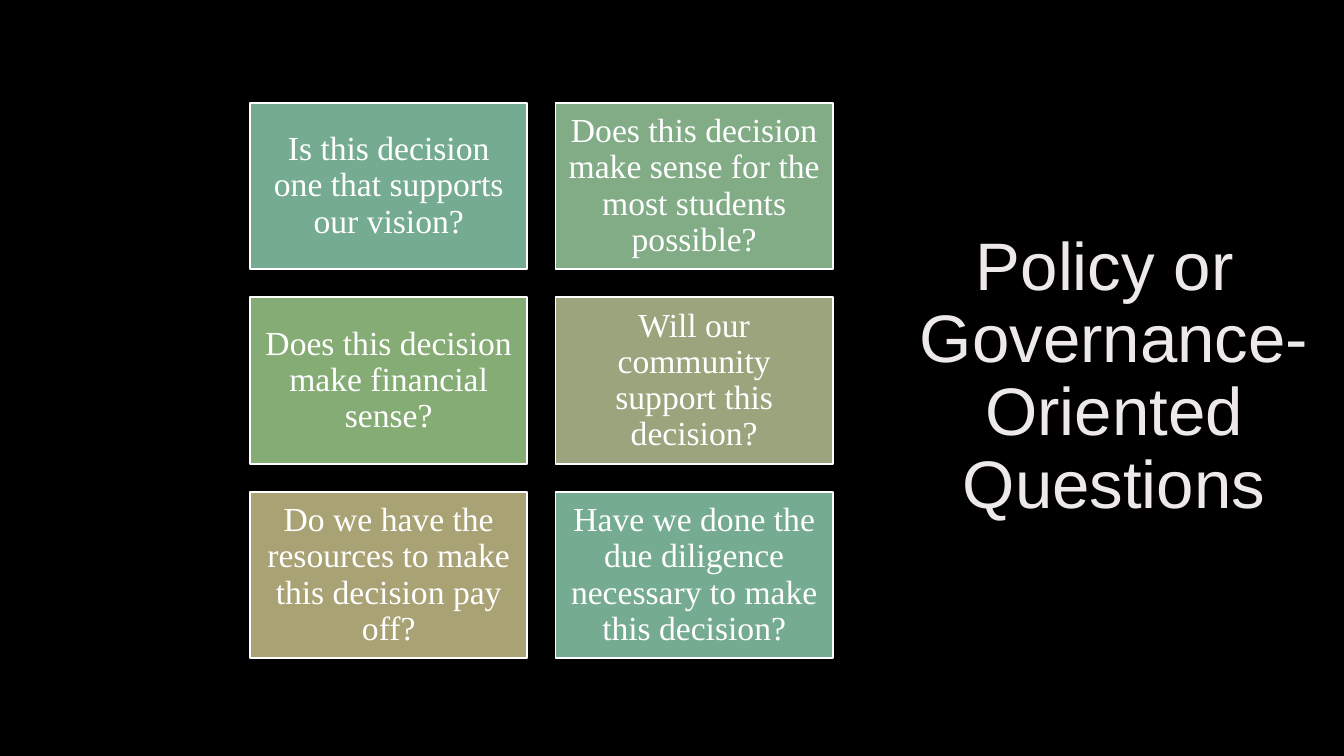
from dataclasses import dataclass

from lxml.etree import Element, SubElement
from pptx import Presentation
from pptx.dml.color import RGBColor
from pptx.enum.shapes import MSO_SHAPE
from pptx.enum.text import MSO_ANCHOR, PP_ALIGN
from pptx.oxml.ns import qn
from pptx.slide import Slide
from pptx.text.text import TextFrame, _Paragraph as Paragraph, _Run as Run
from pptx.util import Inches, Pt

COLORS = {
    "background": "000000",
    "title": "EEE9E9",
    "title_outline": "404040",
    "white": "FFFFFF",
    "teal": "75AB91",
    "sage": "81AC86",
    "green": "86AC76",
    "olive": "9AA57D",
    "sand": "A9A274",
}
COLUMNS = 2
LEFT, TOP = 2.48, 1.02
CARD_W, CARD_H, GAP = 2.75, 1.65, 0.28


@dataclass(frozen=True)
class Card:
    text: str
    color: str


CARDS = [
    Card("Is this decision one that supports our vision?", "teal"),
    Card("Does this decision make sense for the most students possible?", "sage"),
    Card("Does this decision make financial sense?", "green"),
    Card("Will our community support this decision?", "olive"),
    Card("Do we have the resources to make this decision pay off?", "sand"),
    Card("Have we done the due diligence necessary to make this decision?", "teal"),
]
TITLE_LINES = ["Policy or ", "Governance-", "Oriented Questions"]


def rgb(name: str) -> RGBColor:
    return RGBColor.from_string(COLORS[name])


def centered_paragraph(tf: TextFrame) -> Paragraph:
    tf.word_wrap = True
    tf.vertical_anchor = MSO_ANCHOR.MIDDLE
    p = tf.paragraphs[0]
    p.alignment = PP_ALIGN.CENTER
    p.line_spacing = 0.9
    return p


def add_run(p: Paragraph, text: str, font: str, size: int, color: str) -> Run:
    r = p.add_run()
    r.text = text
    r.font.name = font
    r.font.size = Pt(size)
    r.font.color.rgb = rgb(color)
    return r


def outline_run(r: Run, color: str, width: float, opacity: int) -> None:
    ln = Element(qn("a:ln"), w=str(int(Pt(width))))
    fill = SubElement(ln, qn("a:solidFill"))
    clr = SubElement(fill, qn("a:srgbClr"), val=COLORS[color])
    SubElement(clr, qn("a:alpha"), val=str(opacity * 1000))
    r._r.get_or_add_rPr().insert(0, ln)


def add_title(s: Slide) -> None:
    sp = s.shapes.add_textbox(Inches(8.96), Inches(1.23), Inches(4.18), Inches(5.03))
    p = centered_paragraph(sp.text_frame)
    for i, line in enumerate(TITLE_LINES):
        if i:
            p.add_line_break()
        r = add_run(p, line, "Arial", 48, "title")
        outline_run(r, "title_outline", 0.75, 10)


def add_card(s: Slide, card: Card, row: int, col: int) -> None:
    sp = s.shapes.add_shape(
        MSO_SHAPE.RECTANGLE,
        Inches(LEFT + col * (CARD_W + GAP)),
        Inches(TOP + row * (CARD_H + GAP)),
        Inches(CARD_W),
        Inches(CARD_H),
    )
    sp.shadow.inherit = False
    sp.fill.solid()
    sp.fill.fore_color.rgb = rgb(card.color)
    sp.line.color.rgb = rgb("white")
    sp.line.width = Pt(1.25)
    tf = sp.text_frame
    tf.margin_left = tf.margin_right = tf.margin_top = tf.margin_bottom = Inches(0.1)
    add_run(centered_paragraph(tf), card.text, "Times New Roman", 24, "white")


def main() -> None:
    prs = Presentation()
    prs.slide_width, prs.slide_height = Inches(13.33), Inches(7.5)
    s = prs.slides.add_slide(prs.slide_layouts[6])
    s.background.fill.solid()
    s.background.fill.fore_color.rgb = rgb("background")
    add_title(s)
    for i, card in enumerate(CARDS):
        add_card(s, card, *divmod(i, COLUMNS))
    prs.save("out.pptx")


if __name__ == "__main__":
    main()
